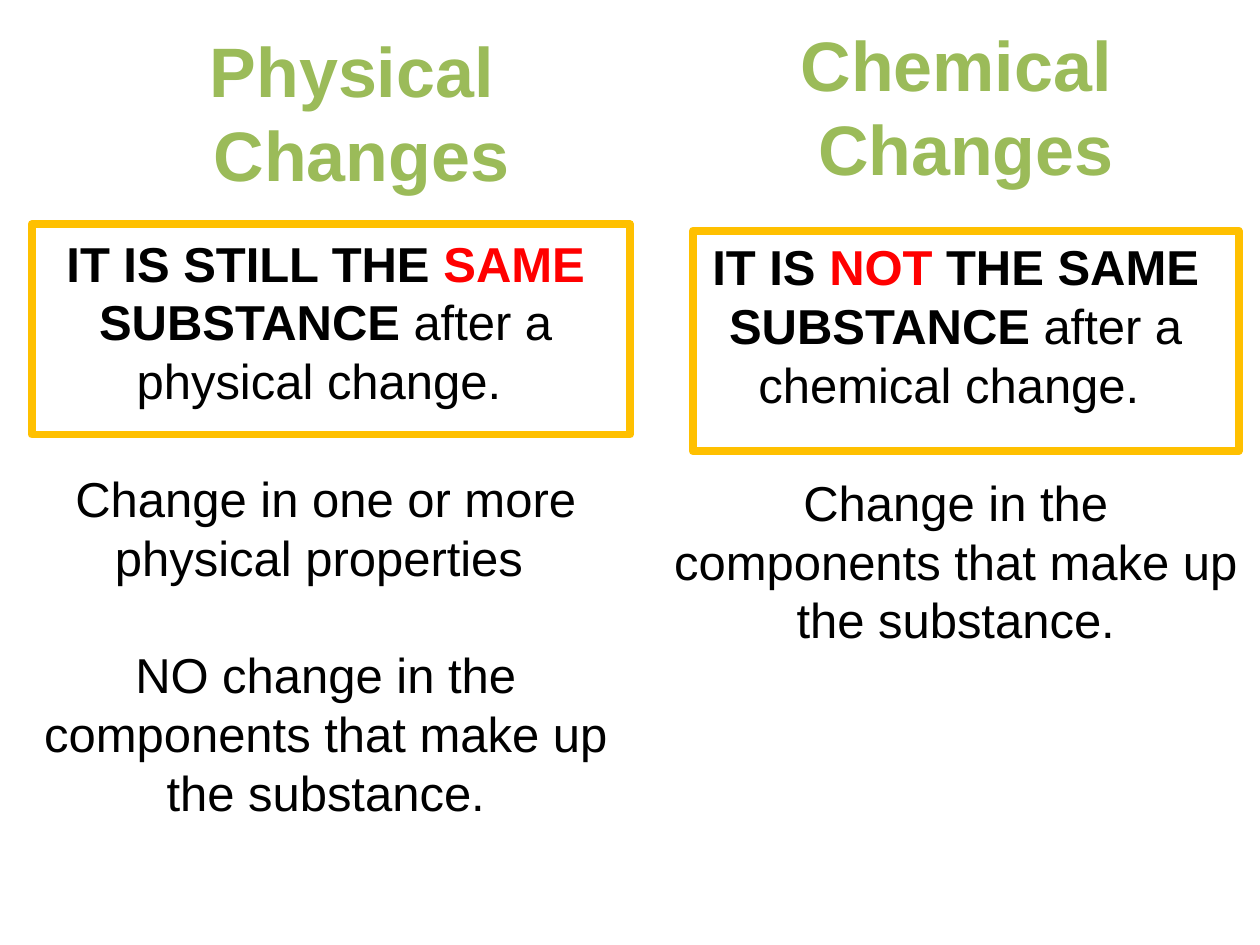
from dataclasses import dataclass

from pptx import Presentation
from pptx.dml.color import RGBColor
from pptx.enum.shapes import MSO_SHAPE
from pptx.enum.text import MSO_ANCHOR, MSO_AUTO_SIZE, PP_ALIGN
from pptx.oxml.ns import qn
from pptx.util import Cm, Pt

RECTANGLE = MSO_SHAPE.RECTANGLE
TOP = MSO_ANCHOR.TOP
NO_AUTOFIT = MSO_AUTO_SIZE.NONE
CENTER = PP_ALIGN.CENTER

FONT = "Arial"
COLORS = {"heading": "9BBB59", "text": "000000", "accent": "FF0000", "frame": "FFC000"}
COMPARISON_LAYOUT = 4
PARAGRAPH_GAP = Pt(33.6)

Box = tuple[float, float, float, float]  # left, top, width, height in cm


@dataclass
class Piece:
    text: str
    bold: bool = False
    color: str = "text"


@dataclass
class Column:
    heading: str
    heading_idx: int
    heading_box: Box
    body: list[list[Piece]]
    body_idx: int
    body_box: Box
    frame_box: Box


COLUMNS = [
    Column(
        "Physical \vChanges", 1, (0.2, 0.43, 14.17, 3.68),
        [
            [Piece("IT IS STILL THE ", True), Piece("SAME", True, "accent"),
             Piece(" SUBSTANCE ", True), Piece("after a physical change. ")],
            [Piece("Change in one or more physical properties ")],
            [Piece("NO change in the components that make up the substance.")],
        ],
        2, (0.43, 4.57, 12.27, 13.41), (0.64, 4.52, 12.06, 4.24),
    ),
    Column(
        "Chemical \vChanges", 3, (15.85, 0.3, 7.24, 3.68),
        [
            [Piece("IT IS ", True), Piece("NOT", True, "accent"),
             Piece(" THE SAME SUBSTANCE ", True), Piece("after a chemical change. ")],
            [Piece("Change in the components that make up the substance.")],
        ],
        4, (13.13, 4.65, 12.27, 10.01), (13.97, 4.65, 11, 4.45),
    ),
]


def color(name: str) -> RGBColor:
    return RGBColor.from_string(COLORS[name])


def format_run(r, size: int, bold: bool, color_name: str) -> None:
    r.font.name = FONT
    r.font.size = Pt(size)
    r.font.bold = bold
    r.font.color.rgb = color(color_name)


def format_paragraph(p, gap: int = 0) -> None:
    p.alignment = CENTER
    p.space_before = gap
    pPr = p._p.get_or_add_pPr()
    pPr.set("marL", "0")
    pPr.set("indent", "0")
    pPr.append(pPr.makeelement(qn("a:buNone"), {}))


def place(sp, box: Box):
    """Move a placeholder and return its prepared text frame."""
    sp.left, sp.top, sp.width, sp.height = (Cm(v) for v in box)
    tf = sp.text_frame
    tf.word_wrap = True
    tf.auto_size = NO_AUTOFIT
    tf.vertical_anchor = TOP
    return tf


def draw_heading(s, column: Column) -> None:
    tf = place(s.placeholders[column.heading_idx], column.heading_box)
    tf.text = column.heading
    p = tf.paragraphs[0]
    format_paragraph(p)
    for r in p.runs:
        format_run(r, 40, True, "heading")


def draw_body(s, column: Column) -> None:
    tf = place(s.placeholders[column.body_idx], column.body_box)
    for i, pieces in enumerate(column.body):
        p = tf.add_paragraph() if i else tf.paragraphs[0]
        format_paragraph(p, PARAGRAPH_GAP if i else 0)
        for piece in pieces:
            r = p.add_run()
            r.text = piece.text
            format_run(r, 28, piece.bold, piece.color)


def draw_frame(s, column: Column) -> None:
    sp = s.shapes.add_shape(RECTANGLE, *(Cm(v) for v in column.frame_box))
    sp.shadow.inherit = False
    sp.fill.background()
    sp.line.color.rgb = color("frame")
    sp.line.width = Pt(4.5)


def main() -> None:
    prs = Presentation()
    prs.slide_width, prs.slide_height = Cm(25.4), Cm(19.05)
    s = prs.slides.add_slide(prs.slide_layouts[COMPARISON_LAYOUT])

    # The two column headings take the place of a slide title
    title = s.shapes.title._element
    title.getparent().remove(title)

    for column in COLUMNS:
        draw_heading(s, column)
        draw_body(s, column)
        draw_frame(s, column)

    prs.save("out.pptx")


if __name__ == "__main__":
    main()
